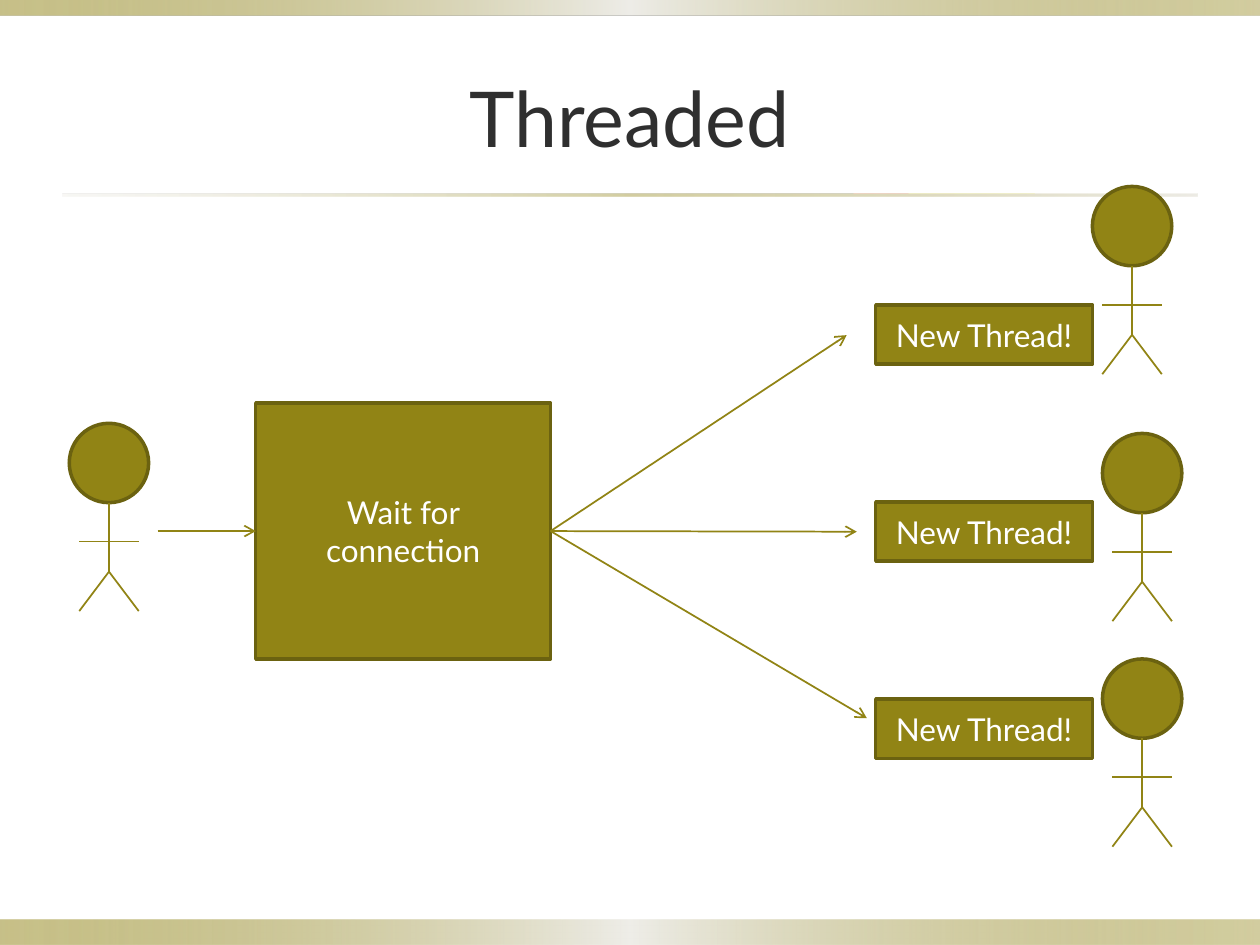
from lxml import etree
from pptx import Presentation
from pptx.dml.color import RGBColor
from pptx.enum.shapes import MSO_CONNECTOR, MSO_SHAPE
from pptx.enum.text import MSO_ANCHOR, PP_ALIGN
from pptx.oxml.ns import qn
from pptx.util import Inches, Pt

RECTANGLE, OVAL = MSO_SHAPE.RECTANGLE, MSO_SHAPE.OVAL
STRAIGHT = MSO_CONNECTOR.STRAIGHT
MIDDLE, CENTER = MSO_ANCHOR.MIDDLE, PP_ALIGN.CENTER

WIDTH, HEIGHT = 10, 7.5
FONT = "Lato"
OLIVE, DARK_OLIVE, INK, WHITE = "918415", "6B6210", "2F2F2F", "FFFFFF"
# Gradient stops: position in percent, colour, opacity in percent
BAND_STOPS = [(0, OLIVE, 50), (50, "EEEDE8", 100), (100, OLIVE, 40)]
RULE_STOPS = [(0, "DCD9CC", 20), (50, OLIVE, 40), (100, "DCD9CC", 50)]

FIGURE = (0.63, 1.49)
SERVER = (2.03, 3.2, 2.34, 2.03)
THREAD_LEFT, THREAD_TOP, THREAD_STEP = 6.95, 2.42, 1.565
THREAD_SIZE = (1.72, 0.47)
CLIENT = (0.55, 3.36)
THREAD_CLIENTS = [(8.67, 1.48), (8.75, 3.44), (8.75, 5.23)]
ARROW_TIPS = [(6.72, 2.66), (6.8, 4.22), (6.88, 5.7)]


def rgb(color):
    return RGBColor.from_string(color)


def add_text(shape, text, size, color):
    frame = shape.text_frame
    frame.word_wrap = True
    frame.vertical_anchor = MIDDLE
    paragraph = frame.paragraphs[0]
    paragraph.text = text
    paragraph.alignment = CENTER
    paragraph.font.name = FONT
    paragraph.font.size = Pt(size)
    paragraph.font.color.rgb = rgb(color)


def add_solid(shapes, kind, box):
    shape = shapes.add_shape(kind, *map(Inches, box))
    shape.shadow.inherit = False
    shape.fill.solid()
    shape.fill.fore_color.rgb = rgb(OLIVE)
    shape.line.color.rgb = rgb(DARK_OLIVE)
    shape.line.width = Pt(2)
    return shape


def add_gradient_bar(shapes, box, stops):
    shape = shapes.add_shape(RECTANGLE, *map(Inches, box))
    shape.shadow.inherit = False
    shape.line.fill.background()
    shape.fill.gradient()
    shape.fill.gradient_angle = 0
    stop_list = shape._element.spPr.find(".//" + qn("a:gsLst"))
    for old_stop in list(stop_list):
        stop_list.remove(old_stop)
    for position, color, opacity in stops:
        stop = etree.SubElement(stop_list, qn("a:gs"), pos=str(position * 1000))
        fill = etree.SubElement(stop, qn("a:srgbClr"), val=color)
        etree.SubElement(fill, qn("a:alpha"), val=str(opacity * 1000))


def add_line(shapes, start, end, arrow=False):
    line = shapes.add_connector(STRAIGHT, *map(Inches, (*start, *end)))
    line.line.color.rgb = rgb(OLIVE)
    line.line.width = Pt(1)
    if arrow:
        etree.SubElement(line.line._get_or_add_ln(), qn("a:tailEnd"), type="arrow")
    etree.SubElement(line._element.spPr, qn("a:effectLst"))


def add_stick_figure(shapes, left, top, width, height):
    group = shapes.add_group_shape().shapes
    center, reach = left + width / 2, width * 3 / 8
    neck = top + width
    arms, hips, feet = top + height * 0.63, top + height * 0.79, top + height
    add_solid(group, OVAL, (left, top, width, width))
    add_line(group, (center, neck), (center, hips))
    add_line(group, (center + reach, arms), (center - reach, arms))
    for side in (-reach, reach):
        add_line(group, (center, hips), (center + side, feet))


def add_frame(shapes, width, height):
    """Add the bands at the slide's edges and the rule below the title."""
    add_gradient_bar(shapes, (0, height - 0.2, width, 0.2), BAND_STOPS)
    add_gradient_bar(shapes, (0, 0, width, 0.12), BAND_STOPS)
    add_gradient_bar(shapes, (width * 0.05, 1.54, width * 0.9, 0.02), RULE_STOPS)


def add_title(shapes, box):
    add_text(shapes.add_textbox(*map(Inches, box)), "Threaded", 44, INK)


def add_server(shapes, left, top, width, height):
    """Add the waiting server with its incoming and outgoing arrows."""
    server = add_solid(shapes, RECTANGLE, (left, top, width, height))
    add_text(server, "Wait for connection", 18, WHITE)
    middle = top + height / 2
    add_line(shapes, (1.25, middle), (left, middle), arrow=True)
    for tip in ARROW_TIPS:
        add_line(shapes, (left + width, middle), tip, arrow=True)


def add_threads(shapes, left, top, step):
    """Add one labelled box and one client for each thread."""
    for row, client in enumerate(THREAD_CLIENTS):
        thread = add_solid(shapes, RECTANGLE, (left, top + row * step, *THREAD_SIZE))
        add_text(thread, "New Thread!", 18, WHITE)
        add_stick_figure(shapes, *client, *FIGURE)


def main():
    presentation = Presentation()
    presentation.slide_width = Inches(WIDTH)
    presentation.slide_height = Inches(HEIGHT)
    slide = presentation.slides.add_slide(presentation.slide_layouts[6])
    shapes = slide.shapes
    add_frame(shapes, WIDTH, HEIGHT)
    add_title(shapes, (WIDTH * 0.05, 0.3, WIDTH * 0.9, 1.25))
    add_server(shapes, *SERVER)
    add_stick_figure(shapes, *CLIENT, *FIGURE)
    add_threads(shapes, THREAD_LEFT, THREAD_TOP, THREAD_STEP)
    presentation.save("out.pptx")


if __name__ == "__main__":
    main()
